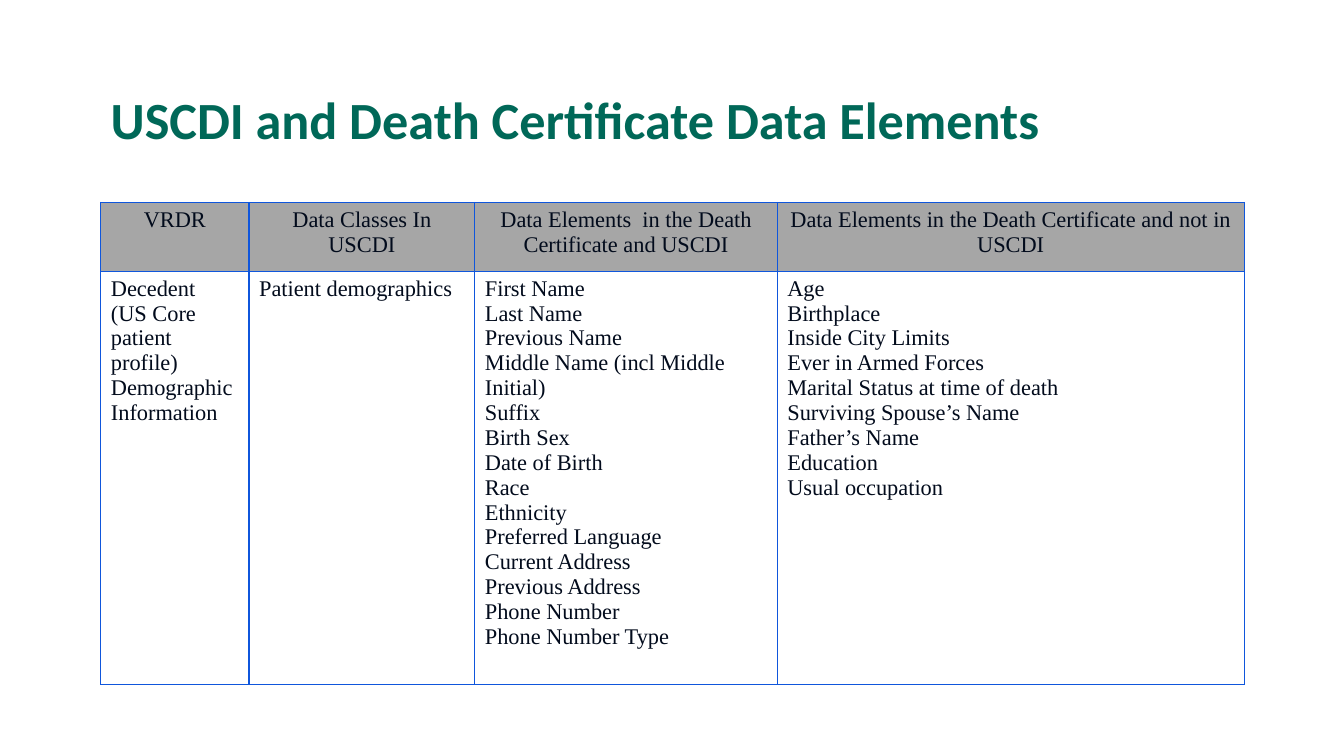
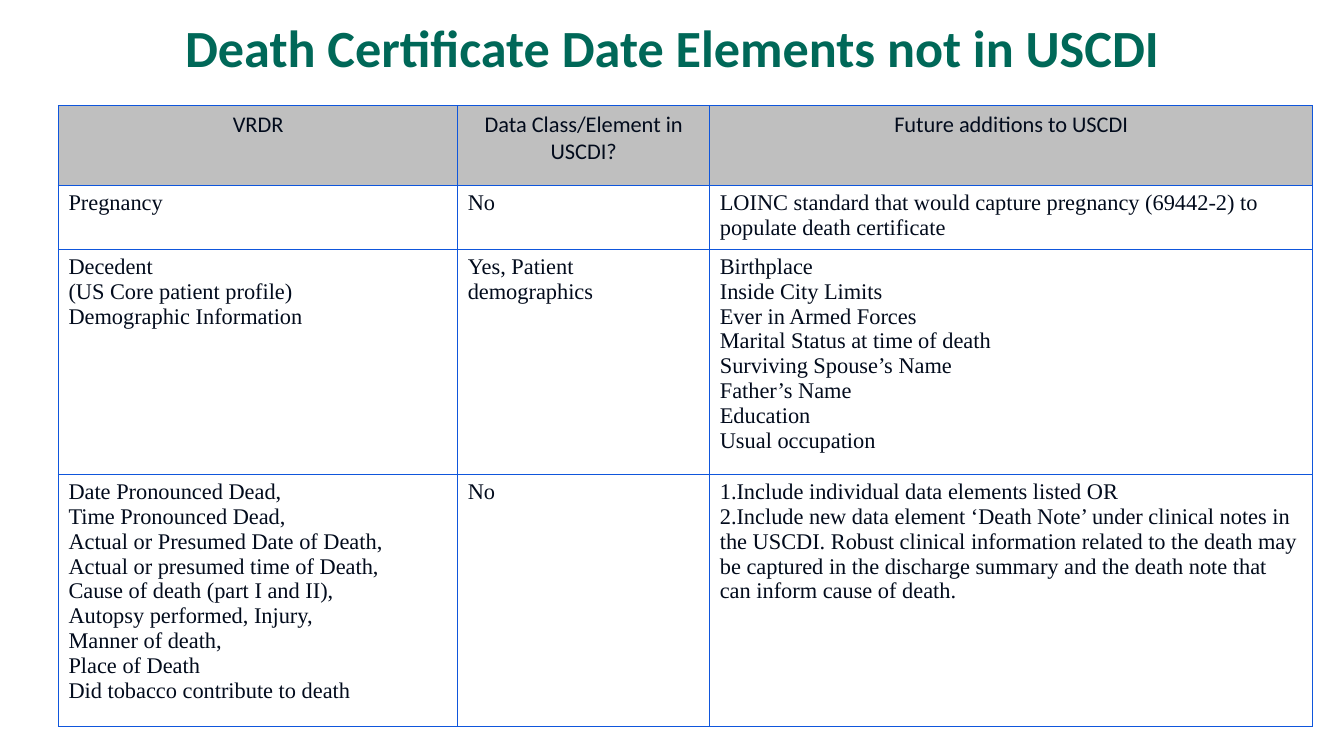
from dataclasses import dataclass

from lxml.etree import SubElement
from pptx import Presentation
from pptx.dml.color import RGBColor
from pptx.enum.text import MSO_ANCHOR as Anchor, PP_ALIGN as Align
from pptx.oxml.ns import qn
from pptx.slide import Slide
from pptx.table import _Cell as Cell
from pptx.text.text import _Paragraph as Paragraph
from pptx.util import Inches, Pt

TITLE_GREEN = "006858"
INK = "020B1C"
BORDER_BLUE = "0F56DC"
SANS = "Calibri"
SERIF = "Times New Roman"

DECEDENT = ("Decedent", "(US Core patient profile)", "Demographic Information")
MISSING_DEMOGRAPHICS = (
    "Birthplace", "Inside City Limits", "Ever in Armed Forces",
    "Marital Status at time of death", "Surviving Spouse’s Name",
    "Father’s Name", "Education", "Usual occupation",
)


@dataclass(frozen=True)
class Entry:
    """Lines of one body cell, optionally numbered."""
    lines: tuple[str, ...]
    numbered: bool = False


@dataclass(frozen=True)
class Heading:
    """Slide title and its box."""
    text: str
    left: float
    top: float
    width: float
    align: Align


@dataclass(frozen=True)
class Grid:
    """Table content, placement and header look."""
    left: float
    top: float
    widths: tuple[float, ...]
    heights: tuple[float, ...]
    header: tuple[str, ...]
    body: tuple[tuple[Entry, ...], ...]
    header_fill: str
    header_font: str
    body_fill: str | None = None


PAGES = (
    (
        Heading("USCDI and Death Certificate Data Elements", 1, 0.29, 11, Align.LEFT),
        Grid(
            1, 2.01, (1.47, 2.24, 3, 4.63), (0.68, 4.1),
            ("VRDR", "Data Classes In USCDI",
             "Data Elements  in the Death Certificate and USCDI",
             "Data Elements in the Death Certificate and not in USCDI"),
            ((
                Entry(DECEDENT),
                Entry(("Patient demographics",)),
                Entry((
                    "First Name", "Last Name", "Previous Name",
                    "Middle Name (incl Middle Initial)", "Suffix", "Birth Sex",
                    "Date of Birth", "Race", "Ethnicity", "Preferred Language",
                    "Current Address", "Previous Address", "Phone Number",
                    "Phone Number Type",
                )),
                Entry(("Age", *MISSING_DEMOGRAPHICS)),
            ),),
            "A6A6A6", SERIF, "FFFFFF",
        ),
    ),
    (
        Heading("Death Certificate Date Elements not in USCDI", 0.67, -0.43, 12, Align.CENTER),
        Grid(
            0.58, 1.05, (3.96, 2.5, 5.98), (0.79, 0.63, 2.23, 2.5),
            ("VRDR", "Data Class/Element in USCDI?", "Future additions to USCDI"),
            (
                (
                    Entry(("Pregnancy",)),
                    Entry(("No",)),
                    Entry(("LOINC standard that would capture pregnancy (69442-2) "
                           "to populate death certificate",)),
                ),
                (
                    Entry(DECEDENT),
                    Entry(("Yes, Patient demographics",)),
                    Entry(MISSING_DEMOGRAPHICS),
                ),
                (
                    Entry((
                        "Date Pronounced Dead,", "Time Pronounced Dead,",
                        "Actual or Presumed Date of Death,",
                        "Actual or presumed time of Death,",
                        "Cause of death (part I and II),",
                        "Autopsy performed, Injury,", "Manner of death,",
                        "Place of Death", "Did tobacco contribute to death",
                    )),
                    Entry(("No",)),
                    Entry((
                        "Include individual data elements listed OR",
                        "Include new data element ‘Death Note’ under clinical notes "
                        "in the USCDI. Robust clinical information related to the "
                        "death may be captured in the discharge summary and the "
                        "death note that can inform cause of death.",
                    ), numbered=True),
                ),
            ),
            "BFBFBF", SANS,
        ),
    ),
)


def rgb(value: str) -> RGBColor:
    """Turn a hex string into a colour."""
    return RGBColor.from_string(value)


def style(line: Paragraph, font: str, size: float, colour: str, align: Align,
          bold: bool = False) -> None:
    """Set the font and alignment of a paragraph."""
    line.alignment = align
    line.font.name = font
    line.font.size = Pt(size)
    line.font.bold = bold
    line.font.color.rgb = rgb(colour)


def number(line: Paragraph) -> None:
    """Number a paragraph automatically."""
    properties = line._p.get_or_add_pPr()
    properties.set("marL", "0")
    properties.set("indent", str(-Inches(0.38)))
    numbering = SubElement(properties, qn("a:buAutoNum"), type="arabicPeriod")
    properties.insert(0, numbering)


def outline(cell: Cell) -> None:
    """Draw the four borders of a cell."""
    properties = cell._tc.get_or_add_tcPr()
    for side in ("lnL", "lnR", "lnT", "lnB"):
        border = SubElement(properties, qn(f"a:{side}"), w=str(Pt(1)))
        paint = SubElement(border, qn("a:solidFill"))
        SubElement(paint, qn("a:srgbClr"), val=BORDER_BLUE)


def fill_cell(cell: Cell, entry: Entry, font: str, fill: str | None, align: Align) -> None:
    """Write and style one table cell."""
    outline(cell)
    if fill:
        cell.fill.solid()
        cell.fill.fore_color.rgb = rgb(fill)
    else:
        cell.fill.background()
    cell.text_frame.text = "\n".join(entry.lines)
    for line in cell.text_frame.paragraphs:
        style(line, font, 16, INK, align)
        if entry.numbered:
            number(line)


def add_heading(slide: Slide, heading: Heading) -> None:
    """Add the slide title."""
    frame = slide.shapes.add_textbox(
        Inches(heading.left), Inches(heading.top), Inches(heading.width), Inches(1.25)
    ).text_frame
    frame.word_wrap = True
    frame.vertical_anchor = Anchor.BOTTOM
    line = frame.paragraphs[0]
    line.text = heading.text
    line.line_spacing = Pt(40)
    style(line, SANS, 37.3, TITLE_GREEN, heading.align, bold=True)


def add_grid(slide: Slide, grid: Grid) -> None:
    """Add a table with a shaded header row."""
    table = slide.shapes.add_table(
        len(grid.heights), len(grid.widths), Inches(grid.left), Inches(grid.top),
        Inches(sum(grid.widths)), Inches(sum(grid.heights)),
    ).table
    table.first_row = table.horz_banding = False
    for column, width in zip(table.columns, grid.widths):
        column.width = Inches(width)
    for row, height in zip(table.rows, grid.heights):
        row.height = Inches(height)
    for column, label in enumerate(grid.header):
        fill_cell(table.cell(0, column), Entry((label,)), grid.header_font,
                  grid.header_fill, Align.CENTER)
    for row, entries in enumerate(grid.body, start=1):
        for column, entry in enumerate(entries):
            fill_cell(table.cell(row, column), entry, SERIF, grid.body_fill, Align.LEFT)


def main() -> None:
    """Build and save the presentation."""
    deck = Presentation()
    deck.slide_width, deck.slide_height = Inches(13.33), Inches(7.5)
    for heading, grid in PAGES:
        slide = deck.slides.add_slide(deck.slide_layouts[6])
        add_heading(slide, heading)
        add_grid(slide, grid)
    deck.save("out.pptx")


if __name__ == "__main__":
    main()
